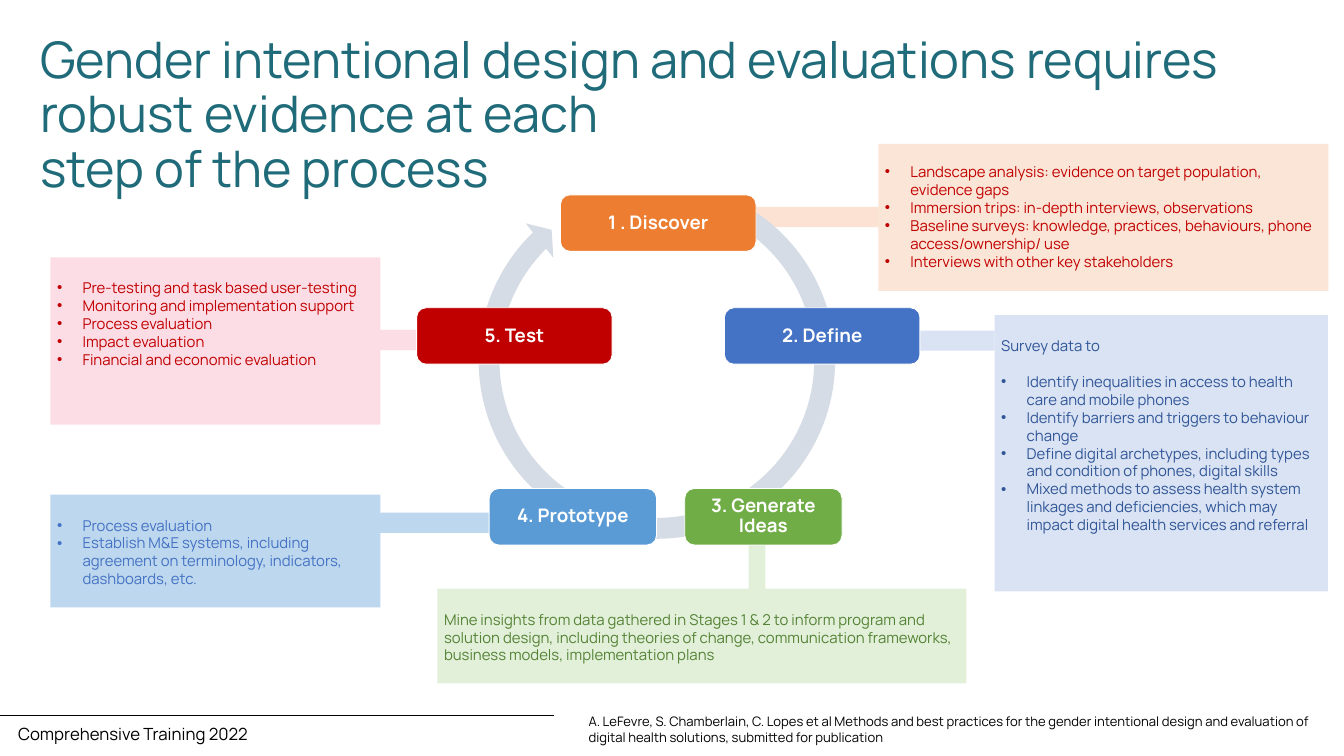
from dataclasses import dataclass
from typing import NamedTuple

from lxml import etree
from pptx import Presentation
from pptx.dml.color import RGBColor
from pptx.enum.shapes import MSO_CONNECTOR, MSO_SHAPE as Preset
from pptx.enum.text import MSO_ANCHOR as Anchor, MSO_AUTO_SIZE as AutoSize, PP_ALIGN as Align
from pptx.oxml.ns import qn
from pptx.util import Inches, Pt

FONT = "Manrope"
BLACK = RGBColor(0x00, 0x00, 0x00)
WHITE = RGBColor(0xFF, 0xFF, 0xFF)
TEAL = RGBColor(0x1F, 0x6B, 0x79)
ORANGE = RGBColor(0xED, 0x7D, 0x31)
PEACH_LINK = RGBColor(0xFB, 0xE2, 0xD2)
PEACH = RGBColor(0xFB, 0xE5, 0xD6)
BLUE = RGBColor(0x44, 0x72, 0xC4)
NAVY = RGBColor(0x2F, 0x55, 0x97)
LAVENDER = RGBColor(0xDA, 0xE3, 0xF3)
GREEN = RGBColor(0x70, 0xAD, 0x47)
DARK_GREEN = RGBColor(0x54, 0x82, 0x35)
PALE_GREEN = RGBColor(0xE2, 0xF0, 0xD9)
SKY = RGBColor(0x5B, 0x9B, 0xD5)
PALE_SKY = RGBColor(0xBD, 0xD7, 0xEE)
RED = RGBColor(0xC0, 0x00, 0x00)
PINK = RGBColor(0xFC, 0xDC, 0xE5)
GREY = RGBColor(0xD6, 0xDC, 0xE5)


class Frame(NamedTuple):
    left: float
    top: float
    width: float
    height: float

    def inches(self) -> list:
        return [Inches(value) for value in self]


@dataclass(frozen=True)
class Step:
    label: str
    color: RGBColor
    stage: Frame
    link: Frame
    link_color: RGBColor
    note: Frame
    note_color: RGBColor
    text_color: RGBColor
    bullets: tuple = ()
    lead: str = ""
    top_inset: float = 0.32


STEPS = (
    Step("1 . Discover", ORANGE, Frame(8.34, 2.9, 2.91, 0.84),
         Frame(11.25, 3.08, 2.06, 0.3), PEACH_LINK,
         Frame(13.07, 2.14, 6.7, 2.19), PEACH, RED,
         ("Landscape analysis: evidence on target population, evidence gaps",
          "Immersion trips: in-depth interviews, observations",
          "Baseline surveys: knowledge, practices, behaviours, phone access/ownership/ use",
          "Interviews with other key stakeholders"), top_inset=0.28),
    Step("2. Define", BLUE, Frame(10.78, 4.58, 2.91, 0.84),
         Frame(12.74, 4.92, 2.06, 0.3), LAVENDER,
         Frame(14.8, 4.69, 4.96, 4.11), LAVENDER, NAVY,
         ("Identify inequalities in access to health care and mobile phones",
          "Identify barriers and triggers to behaviour change",
          "Define digital archetypes, including types and condition of phones, digital skills",
          "Mixed methods to assess health system linkages and deficiencies, "
          "which may impact digital health services and referral"),
         lead="Survey data to"),
    Step("3. Generate Ideas", GREEN, Frame(10.19, 7.27, 2.34, 0.84),
         Frame(11.14, 7.88, 0.25, 1.11), PALE_GREEN,
         Frame(6.51, 8.76, 7.87, 1.41), PALE_GREEN, DARK_GREEN,
         lead="Mine insights from data gathered in Stages 1 & 2 to inform program and "
              "solution design, including theories of change, communication frameworks, "
              "business models, implementation plans"),
    Step("4. Prototype", SKY, Frame(7.28, 7.27, 2.49, 0.84),
         Frame(5.3, 7.63, 2.06, 0.3), PALE_SKY,
         Frame(0.75, 7.36, 4.91, 1.68), PALE_SKY, BLUE,
         ("Process evaluation",
          "Establish M&E systems, including agreement on terminology, indicators, "
          "dashboards, etc.")),
    Step("5. Test", RED, Frame(6.2, 4.58, 2.91, 0.84),
         Frame(4.35, 4.91, 2.06, 0.3), PINK,
         Frame(0.75, 3.83, 4.91, 2.49), PINK, RED,
         ("Pre-testing and task based user-testing",
          "Monitoring and implementation support",
          "Process evaluation",
          "Impact evaluation",
          "Financial and economic evaluation")),
)


def format_text(para, size: float, color: RGBColor, bold: bool = False) -> None:
    for span in para.runs:
        span.font.name = FONT
        span.font.size = Pt(size)
        span.font.bold = bold
        span.font.color.rgb = color


def add_bullet(para) -> None:
    properties = para._p.get_or_add_pPr()
    properties.set("marL", str(Inches(0.38)))
    properties.set("indent", str(Inches(-0.38)))
    etree.SubElement(properties, qn("a:buFont")).set("typeface", "Arial")
    etree.SubElement(properties, qn("a:buChar")).set("char", "•")


def add_block(page, preset, frame: Frame, fill: RGBColor):
    block = page.shapes.add_shape(preset, *frame.inches())
    block.shadow.inherit = False
    block.fill.solid()
    block.fill.fore_color.rgb = fill
    block.line.fill.background()
    return block


def add_ring(page) -> None:
    ring = add_block(page, Preset.CIRCULAR_ARROW, Frame(6.95, 2.54, 5.65, 5.65), GREY)
    for index, value in enumerate((0.055, 3.307, 135.389, 175.319, 0.058)):
        ring.adjustments[index] = value


def add_stage(page, step: Step) -> None:
    box = add_block(page, Preset.ROUNDED_RECTANGLE, step.stage, step.color)
    box.line.color.rgb = WHITE
    box.line.width = Pt(1)
    frame = box.text_frame
    frame.margin_left = frame.margin_right = Inches(0.12)
    frame.margin_top = frame.margin_bottom = Inches(0.12)
    frame.vertical_anchor = Anchor.MIDDLE
    frame.word_wrap = True
    frame.text = step.label
    para = frame.paragraphs[0]
    para.alignment = Align.CENTER
    para.line_spacing = 0.9
    format_text(para, 20, WHITE, bold=True)


def add_note(page, step: Step) -> None:
    frame = add_block(page, Preset.RECTANGLE, step.note, step.note_color).text_frame
    frame.margin_top = Inches(step.top_inset)
    frame.vertical_anchor = Anchor.TOP
    frame.word_wrap = True
    leads = (step.lead,) if step.lead else ()
    frame.text = "\n".join(leads + step.bullets)
    for index, para in enumerate(frame.paragraphs):
        para.alignment = Align.LEFT
        if index >= len(leads):
            add_bullet(para)
        if leads and index == 1:
            para.space_before = Pt(19.2)
        format_text(para, 16, step.text_color)


def add_caption(page, frame: Frame, text: str, size: float) -> None:
    box = page.shapes.add_textbox(*frame.inches())
    box.text_frame.word_wrap = True
    box.text_frame.text = text
    format_text(box.text_frame.paragraphs[0], size, BLACK)


def add_title(page, text: str) -> None:
    title = page.shapes.title
    title.left, title.top, title.width, title.height = Frame(0.5, 0.47, 17.75, 1.28).inches()
    frame = title.text_frame
    frame.text = text
    frame.word_wrap = True
    frame.auto_size = AutoSize.NONE
    frame.vertical_anchor = Anchor.TOP
    para = frame.paragraphs[0]
    para.alignment = Align.LEFT
    para.line_spacing = 0.9
    format_text(para, 54, TEAL)


def add_footer(page) -> None:
    rule = page.shapes.add_connector(
        MSO_CONNECTOR.STRAIGHT, Inches(-0.08), Inches(10.65), Inches(8.25), Inches(10.65))
    rule.line.color.rgb = BLACK
    rule.line.width = Pt(0.5)
    etree.SubElement(rule._element.spPr, qn("a:effectLst"))
    add_caption(page, Frame(0.17, 10.72, 6.58, 0.4), "Comprehensive Training 2022", 18)
    add_caption(page, Frame(8.66, 10.57, 11.36, 0.57),
                "A. LeFevre, S. Chamberlain, C. Lopes et al Methods and best practices for the "
                "gender intentional design and evaluation of digital health solutions, "
                "submitted for publication", 14)


def main() -> None:
    deck = Presentation()
    deck.slide_width, deck.slide_height = Inches(20), Inches(11.25)
    page = deck.slides.add_slide(deck.slide_layouts[5])
    add_title(page, "Gender intentional design and evaluations requires "
                    "robust evidence at each\vstep of the process")
    add_footer(page)
    for step in STEPS:
        add_block(page, Preset.RECTANGLE, step.link, step.link_color)
    add_ring(page)
    for step in STEPS:
        add_stage(page, step)
    for step in STEPS:
        add_note(page, step)
    deck.save("out.pptx")


if __name__ == "__main__":
    main()
